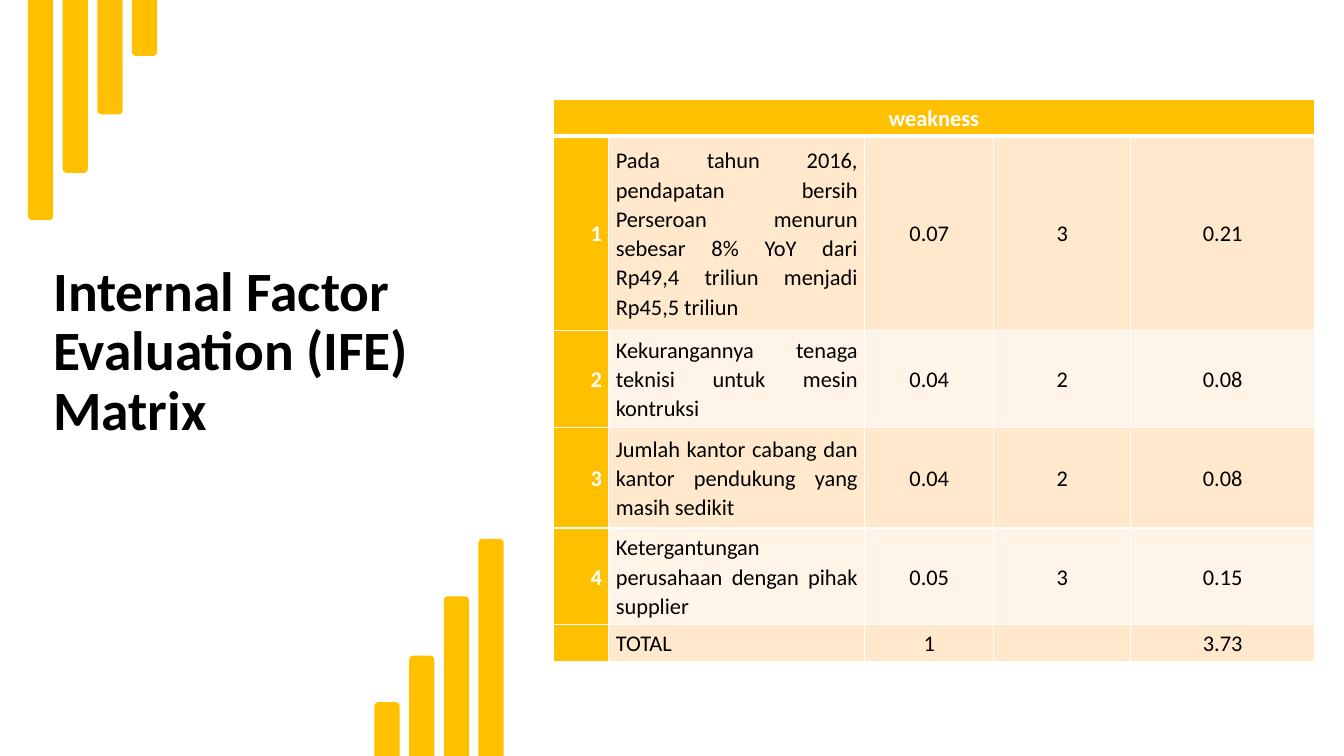
from dataclasses import dataclass

from lxml.etree import SubElement
from pptx import Presentation
from pptx.dml.color import RGBColor
from pptx.enum.shapes import MSO_SHAPE
from pptx.enum.text import MSO_ANCHOR, PP_ALIGN
from pptx.oxml.ns import qn
from pptx.util import Inches, Pt

AMBER = RGBColor(0xFF, 0xC0, 0x00)
PEACH = RGBColor(0xFF, 0xE8, 0xCC)
CREAM = RGBColor(0xFF, 0xF4, 0xE7)
WHITE = RGBColor(0xFF, 0xFF, 0xFF)
BLACK = RGBColor(0x00, 0x00, 0x00)

SLIDE_W, SLIDE_H = Inches(13.33), Inches(7.5)
COLUMN_SHARES = [4.12, 19.05, 9.6, 10.2, 13.65]
ROW_SHARES = [4.8, 25.73, 12.8, 13.33, 12.8, 4.8]
COLUMN_ALIGN = [PP_ALIGN.RIGHT, PP_ALIGN.JUSTIFY] + [PP_ALIGN.CENTER] * 3
BAR_LENGTH, BAR_WIDTH, BAR_PITCH = 35.47, 1.88, 2.58


@dataclass(frozen=True)
class BarGroup:
    first_x: float
    ends: tuple[float, ...]
    direction: int


@dataclass(frozen=True)
class Factor:
    number: str
    text: str
    weight: str
    rating: str
    score: str

    def values(self) -> list[str]:
        return [self.number, self.text, self.weight, self.rating, self.score]


BAR_GROUPS = [
    BarGroup(3.02, (29.13, 22.87, 15.13, 7.4), -1),
    BarGroup(28.8, (92.87, 86.73, 78.87, 71.27), 1),
]

FACTORS = [
    Factor("1", "Pada tahun 2016, pendapatan bersih Perseroan menurun sebesar 8% YoY "
           "dari Rp49,4 triliun menjadi Rp45,5 triliun", "0.07", "3", "0.21"),
    Factor("2", "Kekurangannya tenaga teknisi untuk mesin kontruksi", "0.04", "2", "0.08"),
    Factor("3", "Jumlah kantor cabang dan kantor pendukung yang masih sedikit",
           "0.04", "2", "0.08"),
    Factor("4", "Ketergantungan perusahaan dengan pihak supplier", "0.05", "3", "0.15"),
    Factor("", "TOTAL", "1", "", "3.73"),
]


def across(share: float) -> int:
    return round(SLIDE_W * share / 100)


def down(share: float) -> int:
    return round(SLIDE_H * share / 100)


def apply(target, values: dict) -> None:
    for name, value in values.items():
        setattr(target, name, value)


def write(tf, text: str, size: float, color: RGBColor, bold: bool,
          align: PP_ALIGN, spacing: float) -> None:
    p = tf.paragraphs[0]
    apply(p, {"alignment": align, "line_spacing": spacing})
    r = p.add_run()
    r.text = text
    apply(r.font, {"name": "Calibri", "size": Pt(size), "bold": bold})
    r.font.color.rgb = color


def draw_title(slide) -> None:
    sp = slide.shapes.add_textbox(across(3.23), down(33.73), across(35.93), down(33.87))
    tf = sp.text_frame
    apply(tf, {"word_wrap": True, "vertical_anchor": MSO_ANCHOR.MIDDLE,
               "margin_bottom": down(8.6)})
    write(tf, "Internal Factor Evaluation (IFE) Matrix", 39.6, BLACK, True,
          PP_ALIGN.LEFT, 0.9)


def draw_bars(slide, group: BarGroup) -> None:
    length, width = down(BAR_LENGTH), across(BAR_WIDTH)
    for i, end in enumerate(group.ends):
        center_x = across(group.first_x + i * BAR_PITCH)
        center_y = down(end) + group.direction * length // 2
        sp = slide.shapes.add_shape(MSO_SHAPE.ROUNDED_RECTANGLE, center_x - length // 2,
                                    center_y - width // 2, length, width)
        sp.rotation = 90
        sp.shadow.inherit = False
        sp.fill.solid()
        sp.fill.fore_color.rgb = AMBER
        sp.line.fill.background()


def format_cell(cell, fill: RGBColor, bottom: float = 1) -> None:
    apply(cell, {"margin_left": Inches(0.07), "margin_right": Inches(0.07),
                 "margin_top": 0, "margin_bottom": 0,
                 "vertical_anchor": MSO_ANCHOR.MIDDLE})
    tc_pr = cell._tc.get_or_add_tcPr()
    for edge, width in {"lnL": 1, "lnR": 1, "lnT": 1, "lnB": bottom}.items():
        ln = SubElement(tc_pr, qn(f"a:{edge}"), w=str(Pt(width)))
        SubElement(SubElement(ln, qn("a:solidFill")), qn("a:srgbClr"), val=str(WHITE))
    cell.fill.solid()
    cell.fill.fore_color.rgb = fill


def draw_table(slide) -> None:
    frame = slide.shapes.add_table(
        len(ROW_SHARES), len(COLUMN_SHARES), across(41.18), down(13.2),
        across(sum(COLUMN_SHARES)), down(sum(ROW_SHARES)))
    table = frame.table
    for column, share in zip(table.columns, COLUMN_SHARES):
        column.width = across(share)
    for row, share in zip(table.rows, ROW_SHARES):
        row.height = down(share)

    for c in range(len(COLUMN_SHARES)):
        format_cell(table.cell(0, c), AMBER, 3)
    header = table.cell(0, 0)
    header.merge(table.cell(0, len(COLUMN_SHARES) - 1))
    write(header.text_frame, "weakness", 16, WHITE, True, PP_ALIGN.CENTER, 1.07)

    for r, factor in enumerate(FACTORS, 1):
        band = PEACH if r % 2 else CREAM
        for c, (text, align) in enumerate(zip(factor.values(), COLUMN_ALIGN)):
            cell = table.cell(r, c)
            lead = c == 0
            format_cell(cell, AMBER if lead else band)
            if text:
                write(cell.text_frame, text, 16, WHITE if lead else BLACK, lead,
                      align, 1.07)


def main() -> None:
    prs = Presentation()
    apply(prs, {"slide_width": SLIDE_W, "slide_height": SLIDE_H})
    slide = prs.slides.add_slide(prs.slide_layouts[6])
    draw_title(slide)
    draw_table(slide)
    for group in BAR_GROUPS:
        draw_bars(slide, group)
    prs.save("out.pptx")


if __name__ == "__main__":
    main()
